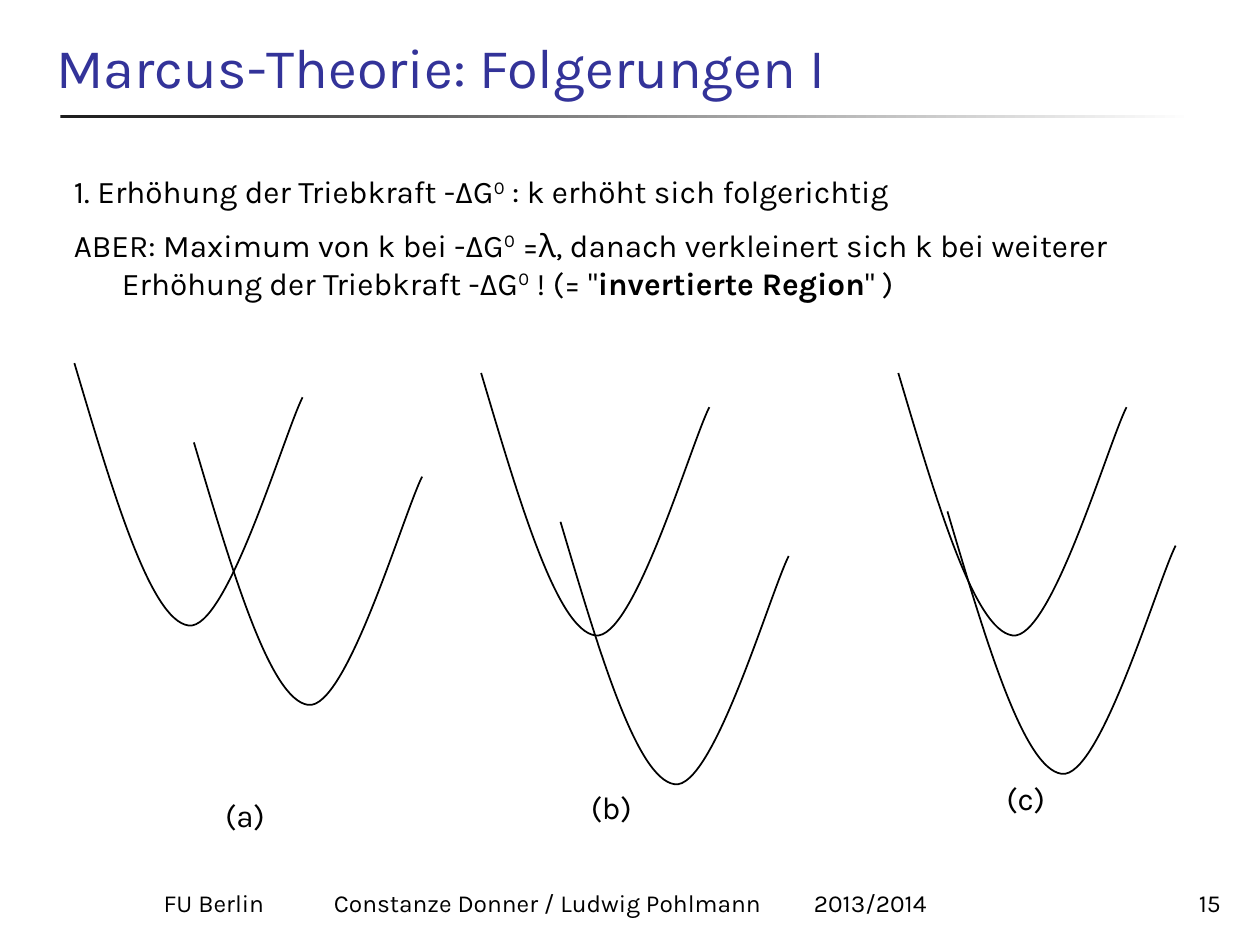
from dataclasses import dataclass

from lxml.etree import SubElement
from pptx import Presentation
from pptx.dml.color import RGBColor
from pptx.enum.shapes import MSO_SHAPE
from pptx.enum.text import MSO_ANCHOR, PP_ALIGN
from pptx.oxml.ns import qn
from pptx.util import Cm, Pt


@dataclass(frozen=True)
class Theme:
    font: str = "Karla"
    ink: RGBColor = RGBColor(0x00, 0x00, 0x00)
    heading: RGBColor = RGBColor(0x33, 0x33, 0x99)
    rule_start: RGBColor = RGBColor(0x1C, 0x1C, 0x1C)
    rule_end: RGBColor = RGBColor(0xFF, 0xFF, 0xFF)
    title_size: Pt = Pt(32)
    body_size: Pt = Pt(18)
    footer_size: Pt = Pt(14)
    paragraph_gap: Pt = Pt(9)
    curve_width: Pt = Pt(1)


theme = Theme()
deck = Presentation()
deck.slide_width, deck.slide_height = Cm(25.4), Cm(19.05)
page = deck.slides.add_slide(deck.slide_layouts[6])


def add_text(place, paragraphs, size=theme.body_size, color=theme.ink, align=PP_ALIGN.LEFT,
             anchor=MSO_ANCHOR.TOP, hanging=0, tabs=()):
    """Each paragraph is a list of (text, style); style is "", "super" or "bold"."""
    box = page.shapes.add_textbox(*(Cm(length) for length in place))
    frame = box.text_frame
    frame.word_wrap = True
    frame.vertical_anchor = anchor
    for index, spans in enumerate(paragraphs):
        para = frame.add_paragraph() if index else frame.paragraphs[0]
        para.alignment = align
        para.space_before = theme.paragraph_gap if index else Pt(0)
        properties = para._p.get_or_add_pPr()
        if hanging:
            properties.set("marL", str(Cm(hanging)))
            properties.set("indent", str(-Cm(hanging)))
        if tabs:
            stops = SubElement(properties, qn("a:tabLst"))
            for position in tabs:
                SubElement(stops, qn("a:tab"), pos=str(Cm(position)), algn="l")
        for text, style in spans:
            span = para.add_run()
            span.text = text
            span.font.name = theme.font
            span.font.size = size
            span.font.color.rgb = color
            span.font.bold = style == "bold"
            if style == "super":
                span.font._element.set("baseline", "30000")


def add_curve(left, top, points):
    """Draw a Bézier curve; points are control, control, end for each segment."""
    builder = page.shapes.build_freeform(Cm(left), Cm(top))
    builder.add_line_segments([(Cm(left + x), Cm(top + y)) for x, y in points], close=False)
    curve = builder.convert_to_shape()
    curve.shadow.inherit = False
    curve.fill.background()
    curve.line.color.rgb = theme.ink
    curve.line.width = theme.curve_width
    outline = curve._element.find(".//" + qn("a:path"))
    lines = outline.findall(qn("a:lnTo"))
    for first in range(0, len(lines), 3):
        bezier = SubElement(outline, qn("a:cubicBezTo"))
        for line in lines[first:first + 3]:
            bezier.append(line[0])
            outline.remove(line)


# Title and fading rule
rule = page.shapes.add_shape(MSO_SHAPE.RECTANGLE, Cm(1.22), Cm(2.31), Cm(22.86), Cm(0.08))
rule.shadow.inherit = False
rule.line.fill.background()
rule.fill.gradient()
rule.fill.gradient_angle = 0
for stop, color in zip(rule.fill.gradient_stops, (theme.rule_start, theme.rule_end)):
    stop.color.rgb = color
add_text((0.89, 0.53, 23.39, 1.6), [[("Marcus-Theorie: Folgerungen I", "")]],
         size=theme.title_size, color=theme.heading, anchor=MSO_ANCHOR.BOTTOM)

# Statements
add_text((1.24, 3.35, 21.87, 2.92), [
    [("1. Erhöhung der Triebkraft -ΔG", ""), ("0", "super"),
     (" : k erhöht sich folgerichtig", "")],
    [("ABER: Maximum von k bei -ΔG", ""), ("0", "super"),
     (" =λ, danach verkleinert sich k bei weiterer Erhöhung der Triebkraft -ΔG", ""),
     ("0", "super"), (" ! (= \"", ""), ("invertierte Region", "bold"), ("\" )", "")],
], hanging=0.97)

# Energy curves: the same parabola twice in each panel
parabola = [(0.77, 2.59), (1.53, 5.18), (2.3, 5.29), (3.07, 5.41), (4.22, 1.45), (4.6, 0.69)]
panels = [
    ("(a)", (4.29, 15.93), [(1.5, 7.32), (3.91, 8.92)]),
    ("(b)", (11.66, 15.77), [(9.7, 7.52), (11.3, 10.52)]),
    ("(c)", (20.04, 15.57), [(18.11, 7.52), (19.1, 10.31)]),
]
for label, corner, starts in panels:
    for left, top in starts:
        add_curve(left, top, parabola)
    add_text((*corner, 1.5, 1.02), [[(label, "")]])

# Footer
add_text((3.05, 17.35, 18.03, 1.27),
         [[("FU Berlin\tConstanze Donner / Ludwig Pohlmann\t2013/2014", "")]],
         size=theme.footer_size, anchor=MSO_ANCHOR.BOTTOM, tabs=(3.43, 13.11))
add_text((21.51, 17.35, 3.35, 1.27), [[("15", "")]], size=theme.footer_size,
         align=PP_ALIGN.RIGHT, anchor=MSO_ANCHOR.BOTTOM)

deck.save("out.pptx")
